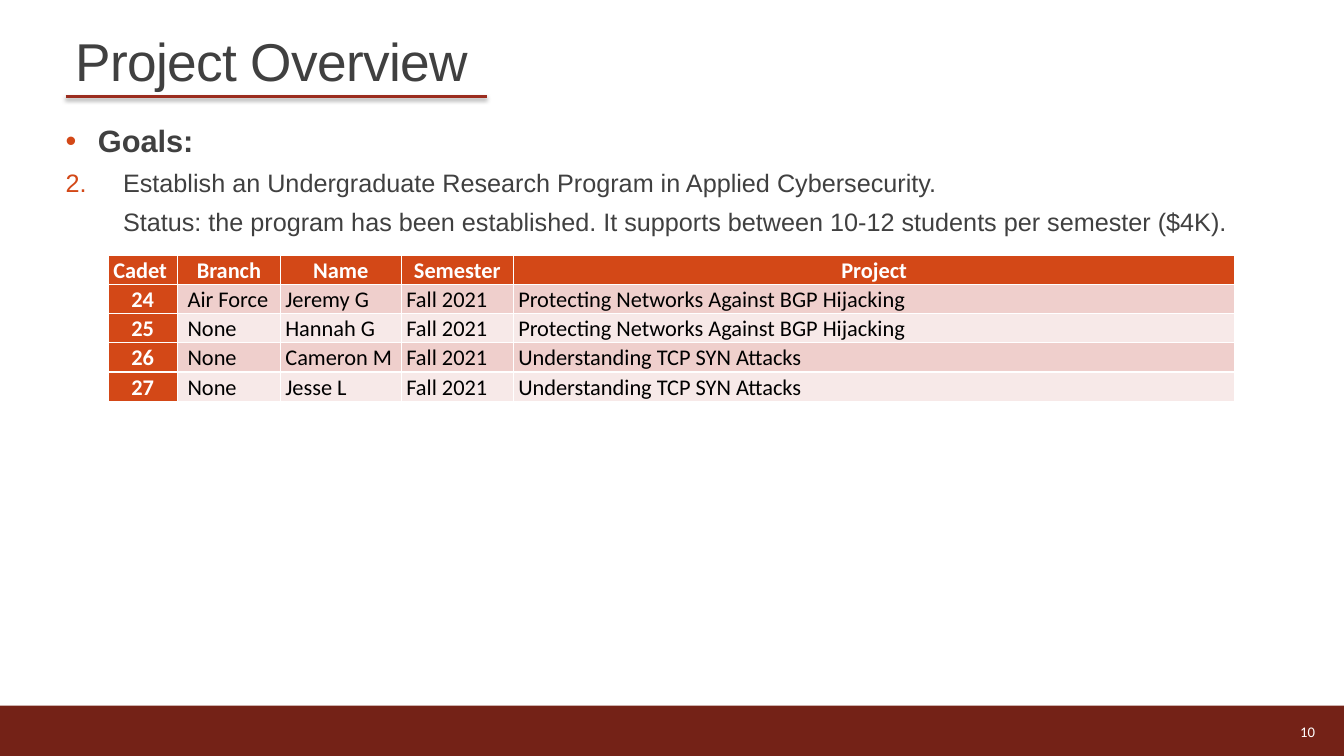
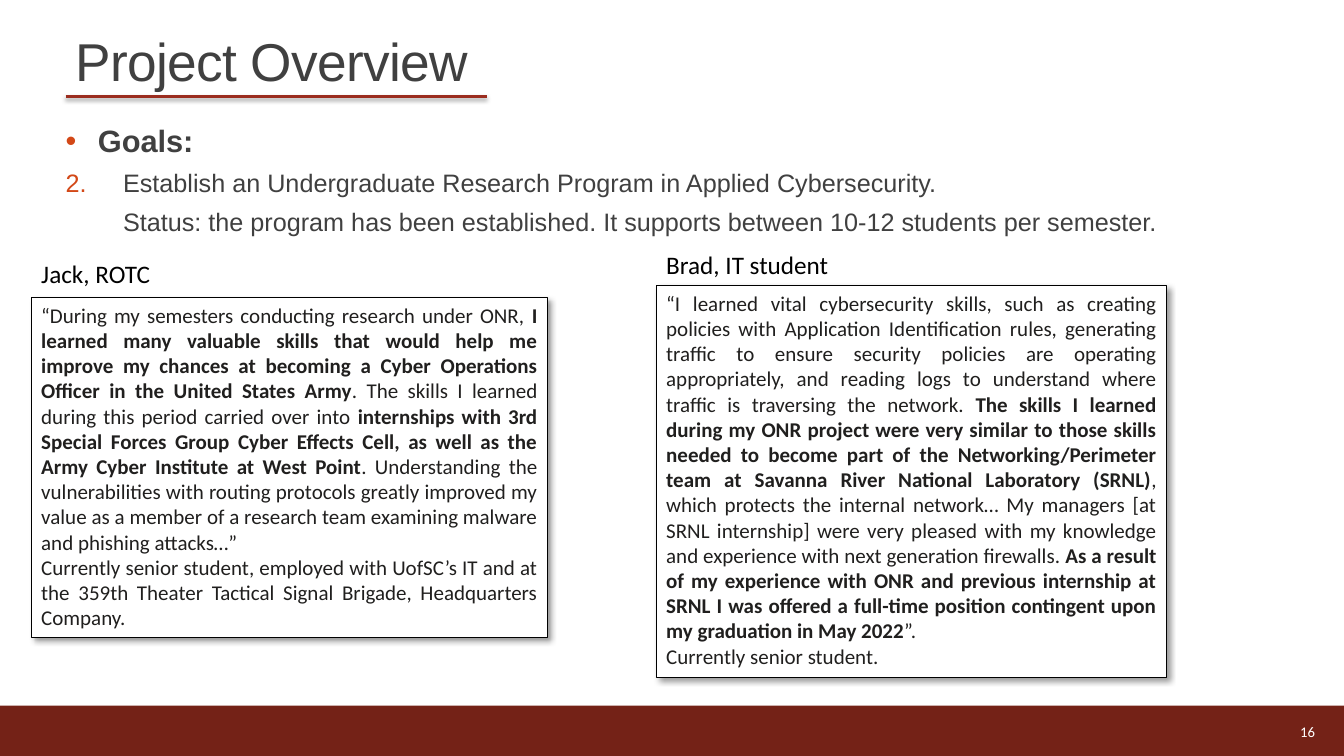
"""Builds two project overview slides: a cadet table and student testimonials."""
import lxml.etree
import pptx
import pptx.dml.color
import pptx.enum.shapes
import pptx.enum.text
import pptx.oxml.ns
import pptx.util

ALIGN = pptx.enum.text.PP_ALIGN
ANCHOR = pptx.enum.text.MSO_ANCHOR
RECTANGLE = pptx.enum.shapes.MSO_SHAPE.RECTANGLE
qn = pptx.oxml.ns.qn
Pt = pptx.util.Pt

WIDTH = pptx.util.Inches(13.33)
HEIGHT = pptx.util.Inches(7.5)

COLOURS = {
    "band": "742217", "rule": "9B2D1F", "accent": "D34817", "heading": "404040",
    "quote": "201F1E", "black": "000000", "white": "FFFFFF",
    "odd row": "EFCFCC", "even row": "F7E9E8",
}

FONTS = {
    "title": {"name": "Arial", "size": Pt(38)},
    "goals": {"name": "Arial", "size": Pt(22), "bold": True},
    "goal": {"name": "Arial", "size": Pt(18), "bold": False},
    "page": {"name": "Calibri", "size": Pt(10.5)},
    "cell": {"name": "Calibri", "size": Pt(16)},
    "quote": {"name": "Calibri", "size": Pt(15)},
    "student": {"name": "Calibri", "size": Pt(18)},
}

SHADOWS = {
    "rule": {"blur": 3.1, "distance": 1.6, "angle": 90, "opacity": 38},
    "quote": {"blur": 4, "distance": 3, "angle": 45, "opacity": 40},
}

MARGIN = 4.88
BAND_TOP = 93.33
COLUMN_SHARES = [5.18, 7.65, 9, 8.33, 53.71]
ROW_SHARE = 3.87

GOAL = "Establish an Undergraduate Research Program in Applied Cybersecurity."
STATUS = "Status: the program has been established. It supports between 10-12 students per semester"

CADETS = [
    ["Cadet ", "Branch", "Name", "Semester", "Project"],
    ["24", " Air Force", "Jeremy G", "Fall 2021", "Protecting Networks Against BGP Hijacking"],
    ["25", " None", "Hannah G", "Fall 2021", "Protecting Networks Against BGP Hijacking"],
    ["26", " None", "Cameron M", "Fall 2021", "Understanding TCP SYN Attacks"],
    ["27", " None", "Jesse L", "Fall 2021", "Understanding TCP SYN Attacks"],
]

JACK_QUOTE = [
    "“During my semesters conducting research under ONR, ",
    "I learned many valuable skills that would help me improve my chances at becoming "
    "a Cyber Operations Officer in the United States Army",
    ". The skills I learned during this period carried over into ",
    "internships with 3rd Special Forces Group Cyber Effects Cell, as well as "
    "the Army Cyber Institute at West Point",
    ". Understanding the vulnerabilities with routing protocols greatly improved my value "
    "as a member of a research team examining malware and phishing attacks…”",
]
JACK_NOW = ("Currently senior student, employed with UofSC’s IT and at the 359th Theater "
            "Tactical Signal Brigade, Headquarters Company.")

BRAD_QUOTE = [
    "“I learned vital cybersecurity skills, such as creating policies with Application "
    "Identification rules, generating traffic to ensure security policies are operating "
    "appropriately, and reading logs to understand where traffic is traversing the network. ",
    "The skills I learned during my ONR project were very similar to those skills needed to "
    "become part of the Networking/Perimeter team at Savanna River National Laboratory (SRNL)",
    ", which protects the internal network… My managers [at SRNL internship] were very pleased "
    "with my knowledge and experience with next generation firewalls. ",
    "As a result of my experience with ONR and previous internship at SRNL I was offered "
    "a full-time position contingent upon my graduation in May 2022",
    "”.",
]
BRAD_NOW = "Currently senior student."


def across(percent):
    return round(WIDTH * percent / 100)


def down(percent):
    return round(HEIGHT * percent / 100)


def area(left, top, width, height):
    return across(left), down(top), across(width), down(height)


def colour(name):
    return pptx.dml.color.RGBColor.from_string(COLOURS[name])


def assign(target, values):
    for attribute, value in values.items():
        setattr(target, attribute, value)


def paint(fill, name):
    fill.solid()
    fill.fore_color.rgb = colour(name)


def write(paragraph, text, font, ink, **extra):
    run = paragraph.add_run()
    run.text = text
    assign(run.font, FONTS[font] | extra)
    run.font.color.rgb = colour(ink)
    return run


def place(placeholder, *shares):
    assign(placeholder, dict(zip(("left", "top", "width", "height"), area(*shares))))


def cast_shadow(caster, blur, distance, angle, opacity):
    effects = lxml.etree.SubElement(caster.element.spPr, qn("a:effectLst"))
    shadow = lxml.etree.SubElement(
        effects, qn("a:outerShdw"), blurRad=str(Pt(blur)), dist=str(Pt(distance)),
        dir=str(angle * 60000), algn="tl", rotWithShape="0")
    tint = lxml.etree.SubElement(shadow, qn("a:srgbClr"), val=COLOURS["black"])
    lxml.etree.SubElement(tint, qn("a:alpha"), val=str(opacity * 1000))


def set_marker(paragraph, indent, hanging, kind, **marker):
    properties = paragraph._p.get_or_add_pPr()
    properties.set("marL", str(pptx.util.Inches(indent)))
    properties.set("indent", str(-pptx.util.Inches(hanging)))
    if kind != "a:buNone":
        tint = lxml.etree.SubElement(properties, qn("a:buClr"))
        lxml.etree.SubElement(tint, qn("a:srgbClr"), val=COLOURS["accent"])
        lxml.etree.SubElement(properties, qn("a:buFont"), typeface="Arial")
    lxml.etree.SubElement(properties, qn(kind), **marker)


def add_title(slide):
    title = slide.shapes.title
    place(title, MARGIN, 0, 90.1, 12.93)
    assign(title.text_frame, {"vertical_anchor": ANCHOR.BOTTOM, "word_wrap": True,
                              "auto_size": pptx.enum.text.MSO_AUTO_SIZE.NONE})
    heading = title.text_frame.paragraphs[0]
    assign(heading, {"alignment": ALIGN.LEFT, "line_spacing": 0.85})
    run = write(heading, "Project Overview", "title", "heading")
    run.font._element.set("spc", "-50")

    rule = slide.shapes.add_connector(
        pptx.enum.shapes.MSO_CONNECTOR.STRAIGHT,
        across(MARGIN), down(12.8), across(36.23), down(12.8))
    rule.line.color.rgb = colour("rule")
    rule.line.width = Pt(2)
    cast_shadow(rule, **SHADOWS["rule"])


def add_goals(slide, status, height):
    body = slide.placeholders[1]
    place(body, MARGIN, 15.47, 90.1, height)
    frame = body.text_frame
    assign(frame, {"margin_left": 0, "margin_right": 0, "vertical_anchor": ANCHOR.TOP,
                   "auto_size": pptx.enum.text.MSO_AUTO_SIZE.NONE})
    goals = [
        ("Goals:", "goals", 0.32, 0.32, "a:buChar", {"char": "•"}),
        (GOAL, "goal", 0.57, 0.57, "a:buAutoNum", {"type": "arabicPeriod", "startAt": "2"}),
        (status, "goal", 0.57, 0, "a:buNone", {}),
    ]
    for index, (text, font, indent, hanging, kind, marker) in enumerate(goals):
        paragraph = frame.add_paragraph() if index else frame.paragraphs[0]
        set_marker(paragraph, indent, hanging, kind, **marker)
        assign(paragraph, {"alignment": ALIGN.JUSTIFY, "space_after": Pt(3),
                           "space_before": Pt(3 if index else 0)})
        write(paragraph, text, font, "heading")


def add_footer(slide, page):
    band = slide.shapes.add_shape(RECTANGLE, *area(0, BAND_TOP, 100, 100 - BAND_TOP))
    band.shadow.inherit = False
    paint(band.fill, "band")
    band.line.fill.background()
    number = slide.shapes.add_textbox(*area(87.85, 94.13, 10.73, 5.33)).text_frame
    assign(number, {"word_wrap": True, "vertical_anchor": ANCHOR.MIDDLE})
    number.paragraphs[0].alignment = ALIGN.RIGHT
    write(number.paragraphs[0], page, "page", "white")


def add_overview_slide(deck, status, goals_height, page):
    slide = deck.slides.add_slide(deck.slide_layouts[1])
    add_title(slide)
    add_goals(slide, status, goals_height)
    add_footer(slide, page)
    return slide


def add_cadets(slide):
    cadets = slide.shapes.add_table(
        len(CADETS), len(COLUMN_SHARES),
        *area(8.03, 33.73, sum(COLUMN_SHARES), ROW_SHARE * len(CADETS))).table
    cadets.first_col = True
    for column, share in zip(cadets.columns, COLUMN_SHARES):
        column.width = across(share)
    for r, record in enumerate(CADETS):
        cadets.rows[r].height = down(ROW_SHARE)
        for c, text in enumerate(record):
            header = r == 0 or c == 0
            cell = cadets.cell(r, c)
            assign(cell, {"margin_left": pptx.util.Inches(0.05),
                          "margin_right": pptx.util.Inches(0.05),
                          "margin_top": 0, "margin_bottom": 0,
                          "vertical_anchor": ANCHOR.BOTTOM})
            paint(cell.fill, "accent" if header else "odd row" if r % 2 else "even row")
            paragraph = cell.text_frame.paragraphs[0]
            assign(paragraph, {"alignment": ALIGN.CENTER if header else ALIGN.LEFT,
                               "line_spacing": 1.07})
            write(paragraph, text, "cell", "white" if header else "black", bold=header)


def add_testimonial(slide, student, label_shares, quote, now, card_shares):
    card = slide.shapes.add_shape(RECTANGLE, *area(*card_shares))
    paint(card.fill, "white")
    card.line.color.rgb = colour("black")
    card.line.width = Pt(0.75)
    cast_shadow(card, **SHADOWS["quote"])
    frame = card.text_frame
    assign(frame, {"word_wrap": True, "vertical_anchor": ANCHOR.TOP})
    for paragraph, parts in ((frame.paragraphs[0], quote), (frame.add_paragraph(), [now])):
        paragraph.alignment = ALIGN.JUSTIFY
        for index, part in enumerate(parts):
            write(paragraph, part, "quote", "quote", bold=index % 2 == 1)

    label = slide.shapes.add_textbox(*area(*label_shares)).text_frame
    label.word_wrap = False
    write(label.paragraphs[0], student, "student", "black")


def main():
    deck = pptx.Presentation()
    assign(deck, {"slide_width": WIDTH, "slide_height": HEIGHT})

    add_cadets(add_overview_slide(deck, STATUS + " ($4K).", 70, "10"))

    testimonials = add_overview_slide(deck, STATUS + ".", 22.27, "16")
    add_testimonial(testimonials, "Jack, ROTC", (2.33, 33.47, 9.68, 5.33),
                    JACK_QUOTE, JACK_NOW, (2.33, 39.33, 38.4, 45.07))
    add_testimonial(testimonials, "Brad, IT student", (48.83, 32.27, 13.73, 5.33),
                    BRAD_QUOTE, BRAD_NOW, (48.83, 37.73, 37.96, 51.87))

    deck.save("out.pptx")


if __name__ == "__main__":
    main()
